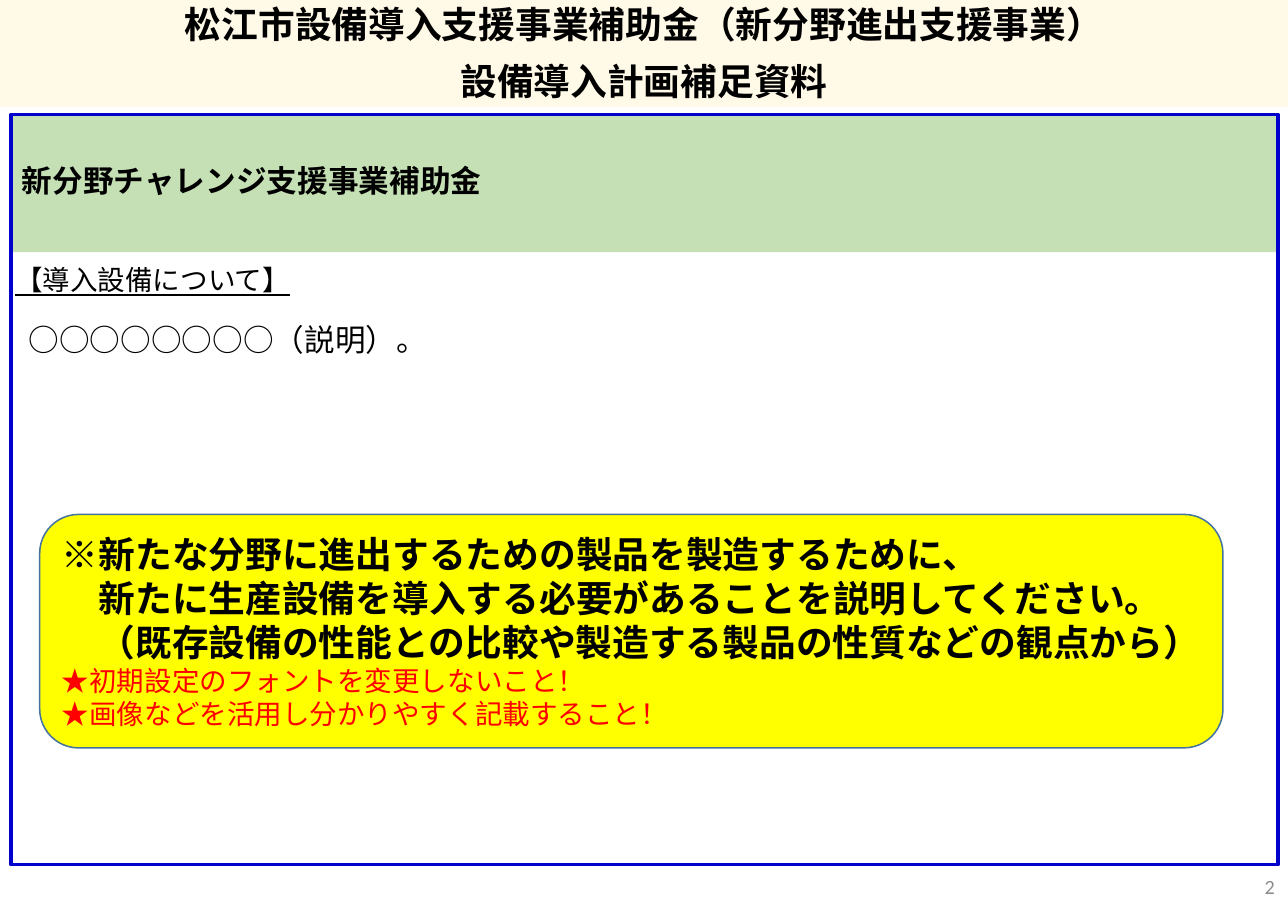
from pptx import Presentation
from pptx import util as u
from pptx.dml.color import RGBColor
from pptx.enum import shapes, text
from pptx.oxml.ns import qn
from lxml import etree

WIDTH, HEIGHT = 11.69, 8.27
JAPANESE = "Noto Sans CJK JP"
CENTER, RIGHT = text.PP_ALIGN.CENTER, text.PP_ALIGN.RIGHT
RECT, ROUND = shapes.MSO_SHAPE.RECTANGLE, shapes.MSO_SHAPE.ROUNDED_RECTANGLE

# Text formats
TITLE = dict(size=24, name=JAPANESE, bold=True)
PROGRAM = dict(size=20, name="Arial", bold=True)
HEADING = dict(size=18, name=JAPANESE, underline=True)
BODY = dict(size=20, name=JAPANESE)
NUMBER = dict(size=13.2, name="Calibri", color="8C8C8C")
ADVICE = dict(size=24, name="Calibri", bold=True)
CAUTION = dict(size=18, name="Calibri", color="FF0000")

# Paragraph formats
TITLE_LINE = dict(alignment=CENTER, line_spacing=0.9, space_before=u.Pt(11))
PROGRAM_LINE = dict(line_spacing=0.9)
BODY_LINE = dict(space_before=u.Pt(11))
RIGHT_LINE = dict(alignment=RIGHT)

# Parts from back to front; box is left, top, width, height in % of the slide
PARTS = [
    dict(box=(0.86, 12.45, 98.37, 15.24), preset=RECT, fill="C5E0B4",
         inset=(0.1, 0, 0.1, 0), line_format=PROGRAM_LINE,
         lines=[("新分野チャレンジ支援事業補助金", PROGRAM)]),
    dict(box=(0.86, 34.58, 97.18, 9.92), inset=(0.16, 0.05, 0, 0.05), top=True,
         line_format=BODY_LINE, lines=[("○○○○○○○○（説明）。", BODY)]),
    dict(box=(0.86, 12.58, 98.37, 82.35), preset=RECT, border=("0000CC", 2.25)),
    dict(box=(0, 28.3, 23.35, 4.84), wrap=False, line_format=RIGHT_LINE,
         lines=[("【導入設備について】", HEADING)]),
    dict(box=(0, 0, 100, 11.73), preset=RECT, fill="FFF9E7",
         inset=(0.1, 0.08, 0.1, 0.05), line_format=TITLE_LINE,
         lines=[("松江市設備導入支援事業補助金（新分野進出支援事業）", TITLE),
                ("設備導入計画補足資料", TITLE)]),
    dict(box=(97.26, 95.28, 2.57, 4.11), wrap=False, line_format=RIGHT_LINE,
         lines=[("2", NUMBER)]),
    dict(box=(3.08, 56.47, 91.87, 25.63), preset=ROUND, fill="FFFF00",
         border=("43739E", 1), wrap=False,
         lines=[("※新たな分野に進出するための製品を製造するために、", ADVICE),
                ("　新たに生産設備を導入する必要があることを説明してください。", ADVICE),
                ("　（既存設備の性能との比較や製造する製品の性質などの観点から）", ADVICE),
                ("★初期設定のフォントを変更しないこと！", CAUTION),
                ("★画像などを活用し分かりやすく記載すること！", CAUTION)]),
]


def color(value):
    return RGBColor.from_string(value)


def apply(target, values):
    for key, value in values.items():
        setattr(target, key, value)


def paint(part, fill=None, border=None):
    part.shadow.inherit = False
    if fill:
        part.fill.solid()
        part.fill.fore_color.rgb = color(fill)
    else:
        part.fill.background()
    if border:
        part.line.color.rgb = color(border[0])
        part.line.width = u.Pt(border[1])
    else:
        part.line.fill.background()


def write(frame, lines, line_format, inset, wrap, top):
    left, above, right, below = (u.Inches(side) for side in inset)
    anchor = text.MSO_ANCHOR.TOP if top else text.MSO_ANCHOR.MIDDLE
    apply(frame, dict(margin_left=left, margin_top=above, margin_right=right,
                      margin_bottom=below, word_wrap=wrap, vertical_anchor=anchor))
    for index, (words, style) in enumerate(lines):
        paragraph = frame.add_paragraph() if index else frame.paragraphs[0]
        apply(paragraph, {"alignment": text.PP_ALIGN.LEFT, **line_format})
        run = paragraph.add_run()
        run.text = words
        values = {"bold": False, **style, "size": u.Pt(style["size"])}
        run.font.color.rgb = color(values.pop("color", "000000"))
        apply(run.font, values)
        # East Asian typeface follows the Latin one
        latin = run.font._element.find(qn("a:latin"))
        east_asian = etree.Element(qn("a:ea"), typeface=JAPANESE)
        latin.addnext(east_asian)


def add_part(slide, box, preset=None, fill=None, border=None, lines=(),
             line_format={}, inset=(0.1, 0.05, 0.1, 0.05), wrap=True, top=False):
    place = [u.Inches(share * full / 100)
             for share, full in zip(box, (WIDTH, HEIGHT) * 2)]
    if preset:
        part = slide.shapes.add_shape(preset, *place)
        paint(part, fill, border)
    else:
        part = slide.shapes.add_textbox(*place)
    if lines:
        write(part.text_frame, lines, line_format, inset, wrap, top)


def main():
    deck = Presentation()
    deck.slide_width, deck.slide_height = u.Inches(WIDTH), u.Inches(HEIGHT)
    slide = deck.slides.add_slide(deck.slide_layouts[6])
    for part in PARTS:
        add_part(slide, **part)
    deck.save("out.pptx")


if __name__ == "__main__":
    main()
